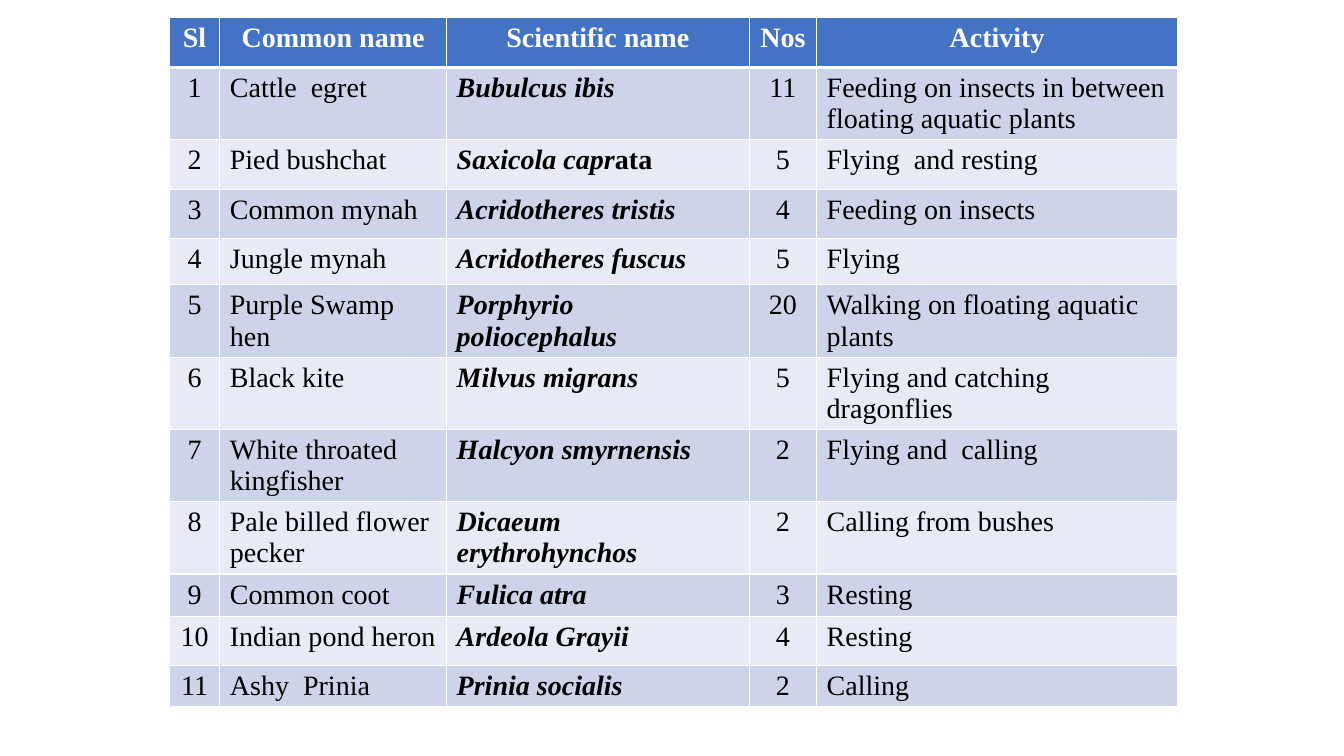
import dataclasses

import pptx
import pptx.dml.color
import pptx.enum.text
import pptx.oxml
import pptx.oxml.ns
import pptx.util
from pptx.util import Inches


@dataclasses.dataclass(frozen=True)
class Theme:
    font: str = "Times New Roman"
    size: int = 20
    header: str = "4472C4"
    bands: tuple = ("CDD4EA", "E8EBF5")
    white: str = "FFFFFF"
    black: str = "000000"
    thin: int = 1
    thick: int = 3


THEME = Theme()
HEADINGS = ("Sl", "Common name", "Scientific name", "Nos", "Activity")
COLUMN_WIDTHS = (0.5, 2.25, 3, 0.67, 3.58)
ROW_HEIGHTS = (0.5, 0.67, 0.49, 0.49, 0.46, 0.4, 0.35, 0.49, 0.49, 0.42, 0.49, 0.25)
CENTRED_COLUMNS = (0, 3)
SCIENTIFIC_COLUMN = 2
BIRDS = (
    ("Cattle  egret", ("Bubulcus ibis",), 11,
     "Feeding on insects in between floating aquatic plants"),
    ("Pied bushchat", ("Saxicola capr", "ata"), 5, "Flying  and resting"),
    ("Common mynah", ("Acridotheres tristis",), 4, "Feeding on insects"),
    ("Jungle mynah", ("Acridotheres fuscus",), 5, "Flying"),
    ("Purple Swamp hen", ("Porphyrio poliocephalus",), 20,
     "Walking on floating aquatic plants"),
    ("Black kite", ("Milvus migrans",), 5, "Flying and catching dragonflies"),
    ("White throated kingfisher", ("Halcyon smyrnensis",), 2, "Flying and  calling"),
    ("Pale billed flower pecker", ("Dicaeum erythrohynchos",), 2, "Calling from bushes"),
    ("Common coot", ("Fulica atra",), 3, "Resting"),
    ("Indian pond heron", ("Ardeola Grayii",), 4, "Resting"),
    ("Ashy  Prinia", ("Prinia socialis",), 2, "Calling"),
)


def rgb(value):
    return pptx.dml.color.RGBColor.from_string(value)


def set_borders(cell, top, bottom):
    properties = cell._tc.get_or_add_tcPr()
    widths = {"lnL": THEME.thin, "lnR": THEME.thin, "lnT": top, "lnB": bottom}
    for position, (side, points) in enumerate(widths.items()):
        line = pptx.oxml.parse_xml(
            f'<a:{side} {pptx.oxml.ns.nsdecls("a")} w="{pptx.util.Pt(points)}">'
            f'<a:solidFill><a:srgbClr val="{THEME.white}"/></a:solidFill></a:{side}>'
        )
        properties.insert(position, line)


def fill_cell(cell, texts, fill, color, bold=False, italic=False, centred=False):
    cell.fill.solid()
    cell.fill.fore_color.rgb = rgb(fill)
    cell.margin_left = cell.margin_right = Inches(0.1)
    cell.margin_top = cell.margin_bottom = Inches(0.05)
    para = cell.text_frame.paragraphs[0]
    align = pptx.enum.text.PP_ALIGN
    para.alignment = align.CENTER if centred else align.LEFT
    for index, text in enumerate(texts):
        span = para.add_run()
        span.text = text
        span.font.name = THEME.font
        span.font.size = pptx.util.Pt(THEME.size)
        span.font.color.rgb = rgb(color)
        span.font.bold = bold
        span.font.italic = italic and index == 0


def add_bird_table(page, left, top):
    frame = page.shapes.add_table(
        len(ROW_HEIGHTS), len(COLUMN_WIDTHS), Inches(left), Inches(top),
        Inches(sum(COLUMN_WIDTHS)), Inches(sum(ROW_HEIGHTS)),
    )
    table = frame.table
    for column, width in zip(table.columns, COLUMN_WIDTHS):
        column.width = Inches(width)
    for row, height in zip(table.rows, ROW_HEIGHTS):
        row.height = Inches(height)

    for column, heading in enumerate(HEADINGS):
        cell = table.cell(0, column)
        fill_cell(cell, (heading,), THEME.header, THEME.white, bold=True, centred=True)
        set_borders(cell, THEME.thin, THEME.thick)

    for number, (common, scientific, count, activity) in enumerate(BIRDS, 1):
        entries = ((str(number),), (common,), scientific, (str(count),), (activity,))
        band = THEME.bands[(number - 1) % 2]
        for column, texts in enumerate(entries):
            cell = table.cell(number, column)
            is_scientific = column == SCIENTIFIC_COLUMN
            fill_cell(cell, texts, band, THEME.black, bold=is_scientific,
                      italic=is_scientific, centred=column in CENTRED_COLUMNS)
            set_borders(cell, THEME.thick if number == 1 else THEME.thin, THEME.thin)


def main():
    deck = pptx.Presentation()
    deck.slide_width = Inches(13.33)
    deck.slide_height = Inches(7.5)
    page = deck.slides.add_slide(deck.slide_layouts[6])
    add_bird_table(page, 1.68, 0.17)
    deck.save("out.pptx")


if __name__ == "__main__":
    main()
